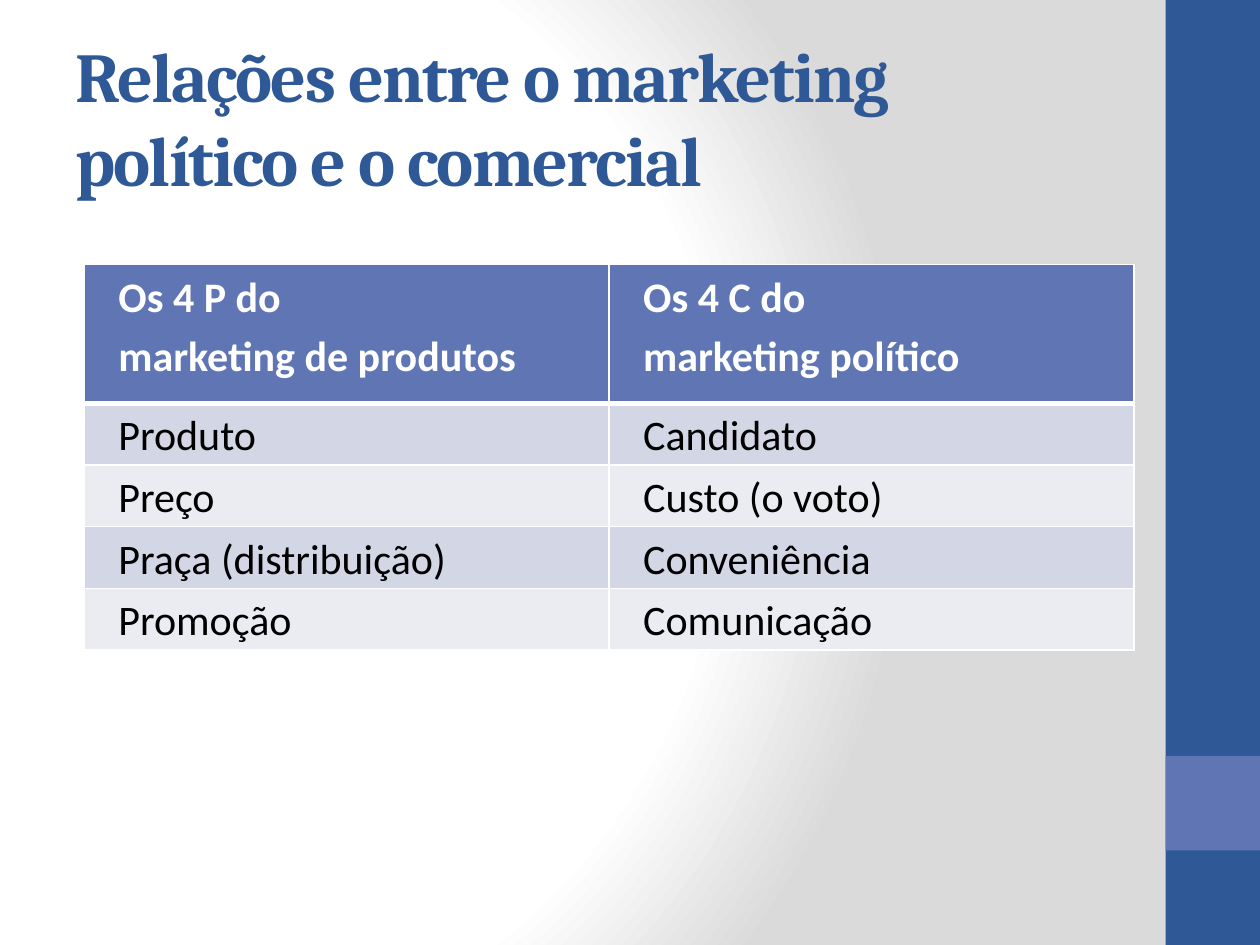
from dataclasses import dataclass

import pptx
import pptx.dml.color
import pptx.enum.shapes
import pptx.enum.text
import pptx.oxml
import pptx.oxml.ns
import pptx.util
from pptx.util import Inches

ALIGN = pptx.enum.text.PP_ALIGN
ANCHOR = pptx.enum.text.MSO_ANCHOR
NS = pptx.oxml.ns.nsdecls("a")


@dataclass(frozen=True)
class Theme:
    navy: str = "2F5897"
    blue: str = "6076B4"
    dark: str = "D2D6E5"
    light: str = "EAECF2"
    white: str = "FFFFFF"
    black: str = "000000"
    gray: str = "DADADA"
    head: str = "Cambria"
    body: str = "Calibri"
    big: int = 40
    mid: int = 24


@dataclass(frozen=True)
class Box:
    left: float
    top: float
    width: float
    height: float

    def lengths(self) -> list:
        return [Inches(n) for n in (self.left, self.top, self.width, self.height)]


@dataclass(frozen=True)
class Band:
    box: Box
    color: str


@dataclass(frozen=True)
class Pair:
    product: str
    politics: str


THEME = Theme()
BANDS = [
    Band(Box(9.25, 0, 0.75, 7.5), THEME.navy),
    Band(Box(9.25, 6, 0.75, 0.75), THEME.blue),
]
TITLE = Box(0.5, 0.3, 8.33, 1.25)
GRID = Box(0.67, 2.1, 8.33, 3.06)
HEAD_ROW, BODY_ROW = 1.1, 0.49
PAIRS = [
    Pair("Os 4 P do\nmarketing de produtos", "Os 4 C do\nmarketing político"),
    Pair("Produto", "Candidato"),
    Pair("Preço", "Custo (o voto)"),
    Pair("Praça (distribuição)", "Conveniência"),
    Pair("Promoção", "Comunicação"),
]


def rgb(color: str) -> pptx.dml.color.RGBColor:
    return pptx.dml.color.RGBColor.from_string(color)


def write(frame, text: str, *, font: str, size: int, color: str,
          bold: bool = False, align=ALIGN.LEFT, track: float = 0,
          indent: float = 0, line: float = 1.0, after: float = 0) -> None:
    """Fill a frame with one paragraph; a newline becomes a line break."""
    para = frame.paragraphs[0]
    para.text = text
    para.alignment = align
    para.line_spacing = line
    para.space_after = pptx.util.Pt(after)
    if indent:
        para._p.get_or_add_pPr().set("marL", str(Inches(indent)))
    for run in para.runs:
        run.font.name = font
        run.font.size = pptx.util.Pt(size)
        run.font.bold = bold
        run.font.color.rgb = rgb(color)
        if track:
            run._r.get_or_add_rPr().set("spc", str(round(track * 100)))


def paint_back(slide) -> None:
    """Give the slide a circular gradient, which needs XML."""
    fill = slide.background.fill
    fill.gradient()
    stops = [(0, THEME.white), (75, THEME.white), (100, THEME.gray)]
    marks = "".join(
        f'<a:gs pos="{pos * 1000}"><a:srgbClr val="{color}"/></a:gs>'
        for pos, color in stops)
    grad = pptx.oxml.parse_xml(
        f'<a:gradFill {NS} rotWithShape="1"><a:gsLst>{marks}</a:gsLst>'
        '<a:path path="circle"><a:fillToRect l="20000" t="50000" '
        'r="100000" b="50000"/></a:path></a:gradFill>')
    old = slide._element.find(".//" + pptx.oxml.ns.qn("a:gradFill"))
    old.getparent().replace(old, grad)


def draw_band(slide, band: Band) -> None:
    shape = slide.shapes.add_shape(
        pptx.enum.shapes.MSO_SHAPE.RECTANGLE, *band.box.lengths())
    shape.shadow.inherit = False
    shape.fill.solid()
    shape.fill.fore_color.rgb = rgb(band.color)
    shape.line.fill.background()


def draw_title(slide, text: str) -> None:
    frame = slide.shapes.add_textbox(*TITLE.lengths()).text_frame
    frame.word_wrap = True
    frame.vertical_anchor = ANCHOR.MIDDLE
    write(frame, text, font=THEME.head, size=THEME.big, color=THEME.navy,
          bold=True, track=-1)


def edge_cell(cell, top: float, base: float) -> None:
    """Draw white cell borders; top and base are widths in points."""
    props = cell._tc.get_or_add_tcPr()
    sides = {"L": 1, "R": 1, "T": top, "B": base}
    for spot, (side, width) in enumerate(sides.items()):
        props.insert(spot, pptx.oxml.parse_xml(
            f'<a:ln{side} {NS} w="{pptx.util.Pt(width)}"><a:solidFill>'
            f'<a:srgbClr val="{THEME.white}"/></a:solidFill></a:ln{side}>'))


def draw_table(slide, pairs: list[Pair]) -> None:
    table = slide.shapes.add_table(len(pairs), 2, *GRID.lengths()).table
    for col in table.columns:
        col.width = Inches(GRID.width / 2)
    for row, pair in enumerate(pairs):
        head = row == 0
        table.rows[row].height = Inches(HEAD_ROW if head else BODY_ROW)
        shade = THEME.blue if head else (THEME.light, THEME.dark)[row % 2]
        for col, text in enumerate((pair.product, pair.politics)):
            cell = table.cell(row, col)
            cell.margin_left = cell.margin_right = Inches(0.07)
            cell.margin_top = cell.margin_bottom = 0
            cell.fill.solid()
            cell.fill.fore_color.rgb = rgb(shade)
            edge_cell(cell, 3 if row == 1 else 1, 3 if head else 1)
            write(cell.text_frame, text, font=THEME.body, size=THEME.mid,
                  color=THEME.white if head else THEME.black, bold=head,
                  align=ALIGN.LEFT if head else ALIGN.JUSTIFY,
                  indent=0.2, line=1.15, after=6)


def main() -> None:
    deck = pptx.Presentation()
    deck.slide_width, deck.slide_height = Inches(10), Inches(7.5)
    slide = deck.slides.add_slide(deck.slide_layouts[6])
    paint_back(slide)
    for band in BANDS:
        draw_band(slide, band)
    draw_title(slide, "Relações entre o marketing político e o comercial")
    draw_table(slide, PAIRS)
    deck.save("out.pptx")


if __name__ == "__main__":
    main()
